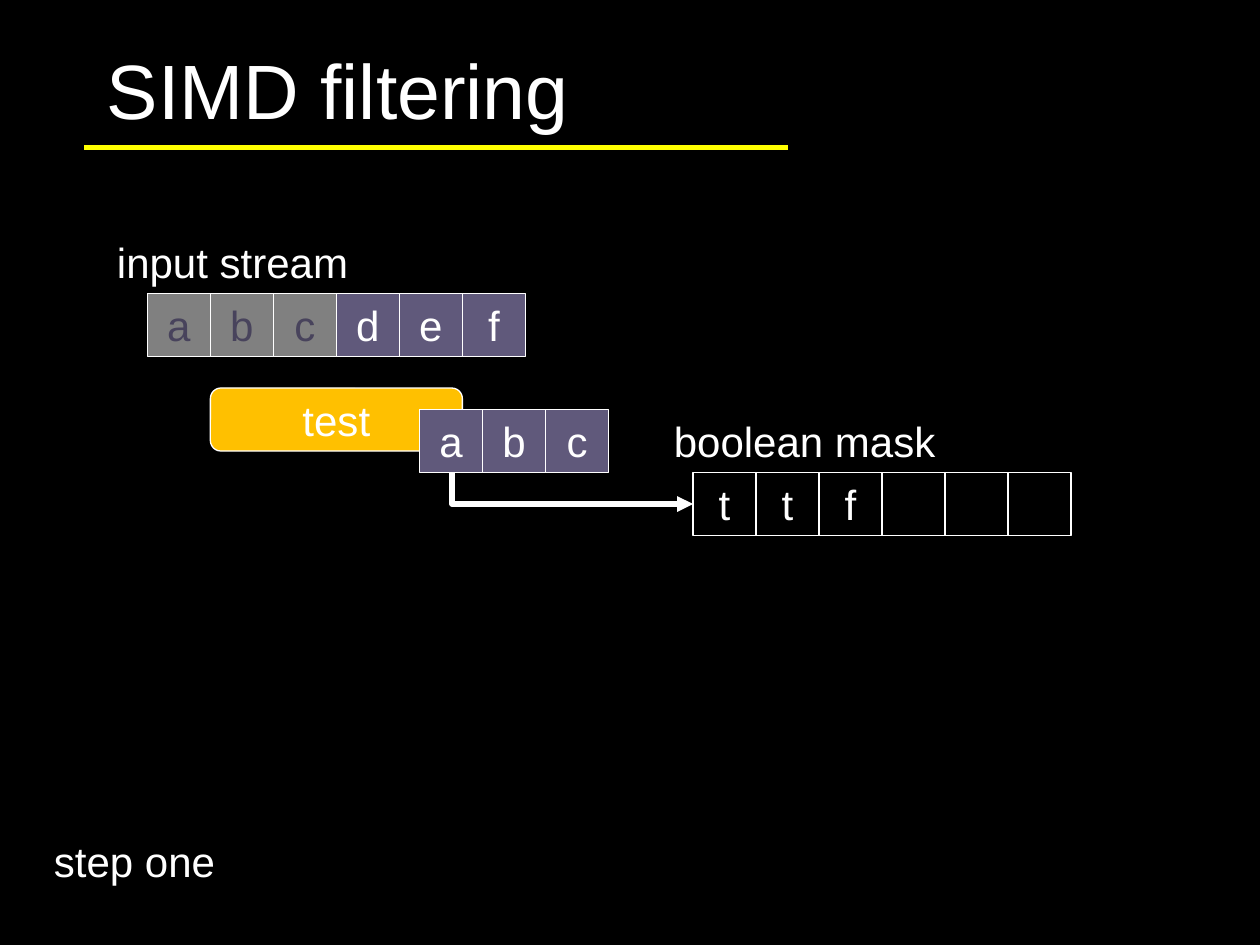
from lxml.etree import SubElement
from pptx import Presentation
from pptx.dml.color import RGBColor
from pptx.enum.shapes import MSO_CONNECTOR, MSO_SHAPE
from pptx.enum.text import MSO_ANCHOR, MSO_AUTO_SIZE, PP_ALIGN
from pptx.oxml.ns import qn
from pptx.util import Inches, Pt

COLORS = {
    "black": "000000",
    "white": "FFFFFF",
    "yellow": "FFFF00",
    "amber": "FFC000",
    "violet": "60597B",
    "gray": "808080",
    "dim": "48435C",
}
CELL = 0.5


def color(name):
    return RGBColor.from_string(COLORS[name])


def write(frame, text, size=24, ink="white", align=PP_ALIGN.LEFT):
    para = frame.paragraphs[0]
    para.text = text
    para.alignment = align
    para.font.name = "Arial"
    para.font.size = Pt(size)
    para.font.color.rgb = color(ink)


def add_title(page, text):
    box = page.shapes.add_textbox(Inches(0.75), Inches(0.08), Inches(8.5), Inches(1.25))
    box.text_frame.word_wrap = True
    box.text_frame.vertical_anchor = MSO_ANCHOR.MIDDLE
    write(box.text_frame, text, size=44)


def add_label(page, text, left, top, width):
    box = page.shapes.add_textbox(Inches(left), Inches(top), Inches(width), Inches(0.5))
    box.text_frame.word_wrap = False
    box.text_frame.auto_size = MSO_AUTO_SIZE.SHAPE_TO_FIT_TEXT
    write(box.text_frame, text)


def add_block(shapes, text, left, top, width, fill, ink="white", kind=MSO_SHAPE.RECTANGLE):
    block = shapes.add_shape(kind, Inches(left), Inches(top), Inches(width), Inches(CELL))
    block.shadow.inherit = False
    block.fill.solid()
    block.fill.fore_color.rgb = color(fill)
    block.line.color.rgb = color("white")
    block.line.width = Pt(0.75)
    block.text_frame.vertical_anchor = MSO_ANCHOR.MIDDLE
    if text:
        write(block.text_frame, text, ink=ink, align=PP_ALIGN.CENTER)


def add_cells(shapes, texts, left, top, fill, ink="white"):
    for index, text in enumerate(texts):
        add_block(shapes, text, left + index * CELL, top, CELL, fill, ink)


def add_line(page, kind, start, end, ink):
    line = page.shapes.add_connector(kind, *map(Inches, start + end))
    line.line.color.rgb = color(ink)
    line.line.width = Pt(3)
    SubElement(line._element.spPr, qn("a:effectLst"))
    return line


def add_bent_arrow(page, start, end, bend):
    arrow = add_line(page, MSO_CONNECTOR.ELBOW, start, end, "white")
    SubElement(arrow.line._get_or_add_ln(), qn("a:tailEnd"), type="triangle")
    guides = arrow._element.spPr.find(qn("a:prstGeom")).get_or_add_avLst()
    SubElement(guides, qn("a:gd"), name="adj1", fmla=f"val {bend}")


def main():
    deck = Presentation()
    deck.slide_width, deck.slide_height = Inches(10), Inches(7.5)
    page = deck.slides.add_slide(deck.slide_layouts[6])
    page.background.fill.solid()
    page.background.fill.fore_color.rgb = color("black")

    add_line(page, MSO_CONNECTOR.STRAIGHT, (0.67, 1.17), (6.25, 1.17), "yellow")
    add_title(page, "SIMD filtering")

    add_label(page, "input stream", 0.83, 1.83, 2.05)
    add_cells(page.shapes, "abc", 1.17, 2.33, "gray", "dim")
    add_cells(page.shapes, "def", 2.67, 2.33, "violet")

    add_block(page.shapes, "test", 1.67, 3.08, 2, "amber", kind=MSO_SHAPE.ROUNDED_RECTANGLE)
    add_label(page, "boolean mask", 5.25, 3.25, 2.3)
    add_bent_arrow(page, (3.58, 3.58), (5.5, 4), bend=400)
    add_cells(page.shapes, "abc", 3.33, 3.25, "violet")

    add_cells(page.shapes, [""] * 3, 7, 3.75, "black")
    results = page.shapes.add_group_shape()
    add_cells(results.shapes, "ttf", 5.5, 3.75, "black")

    add_label(page, "step one", 0.33, 6.58, 1.49)
    deck.save("out.pptx")


if __name__ == "__main__":
    main()
